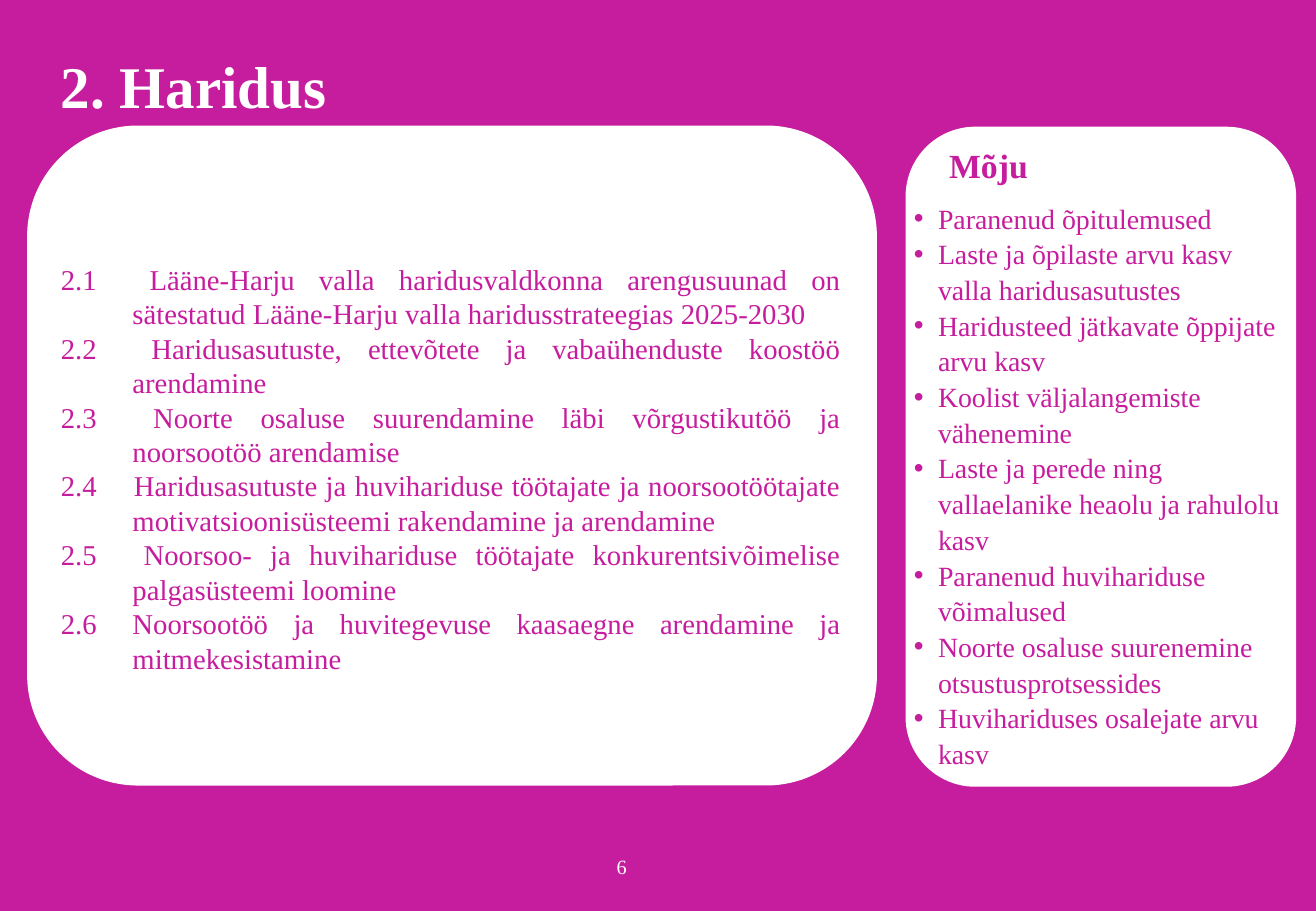
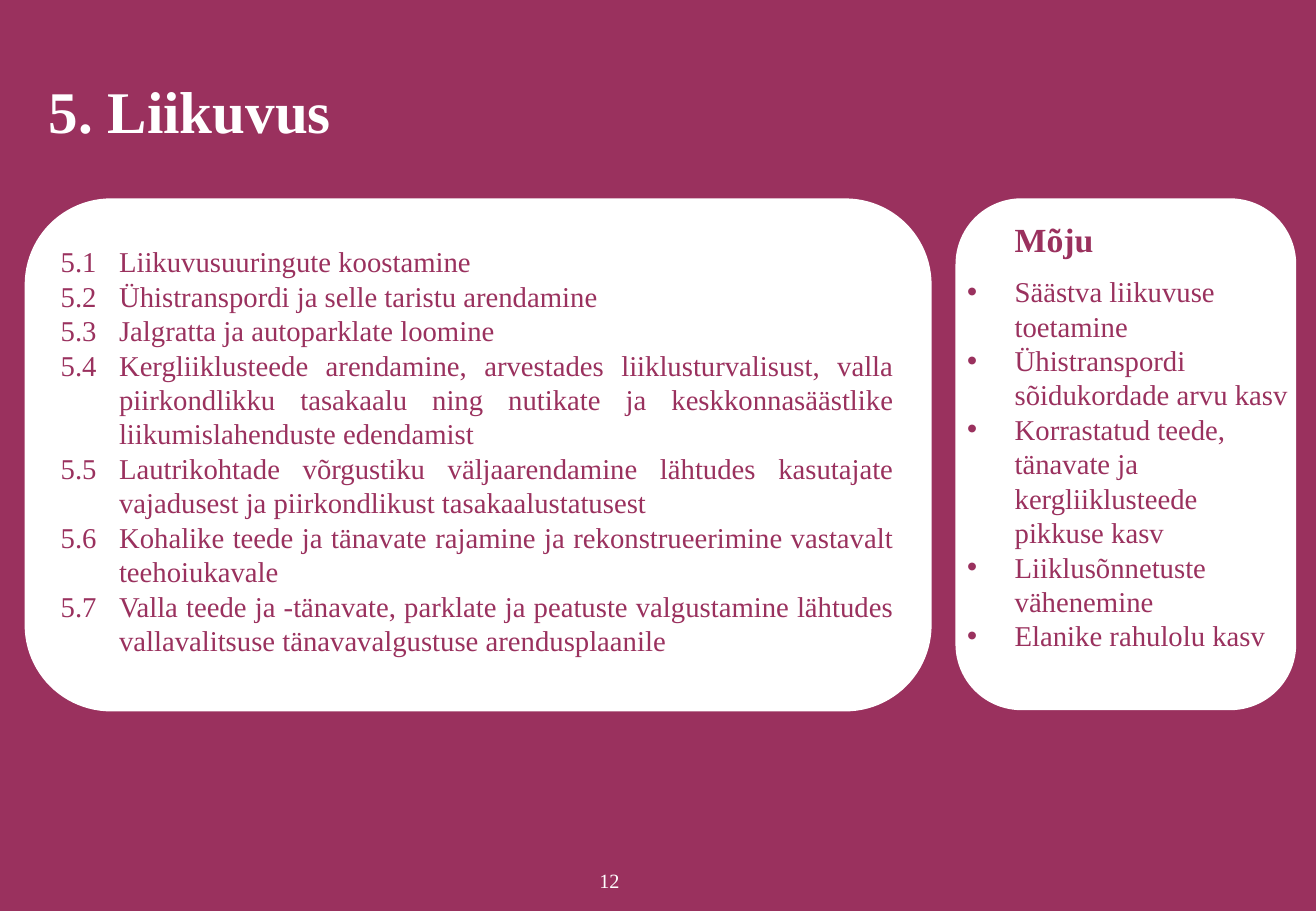
from lxml import etree
from pptx import Presentation
from pptx.dml.color import RGBColor
from pptx.enum.shapes import MSO_SHAPE
from pptx.enum.text import MSO_ANCHOR, MSO_AUTO_SIZE, PP_ALIGN
from pptx.oxml.ns import qn
from pptx.util import Inches, Pt

ROUNDED = MSO_SHAPE.ROUNDED_RECTANGLE
MIDDLE = MSO_ANCHOR.MIDDLE
NO_AUTOFIT = MSO_AUTO_SIZE.NONE
LEFT, CENTER, JUSTIFY = PP_ALIGN.LEFT, PP_ALIGN.CENTER, PP_ALIGN.JUSTIFY

FONT = "Times New Roman"
WHITE = "FFFFFF"
TITLE_SIZE, HEADING_SIZE, BODY_SIZE, NUMBER_SIZE = 35, 20, 17, 12
INSET = 0.05
TITLE_ONLY = 5


def color(value):
    return RGBColor.from_string(value)


class Deck:
    def __init__(self):
        self.presentation = Presentation()
        self.presentation.slide_width = Inches(10.83)
        self.presentation.slide_height = Inches(7.5)
        self.slide = None
        self.accent = None

    def start(self, accent):
        layout = self.presentation.slide_layouts[TITLE_ONLY]
        self.slide = self.presentation.slides.add_slide(layout)
        self.accent = accent
        fill = self.slide.background.fill
        fill.solid()
        fill.fore_color.rgb = color(accent)

    def frame(self, shape, wrap=True):
        frame = shape.text_frame
        frame.auto_size = NO_AUTOFIT
        frame.word_wrap = wrap
        frame.vertical_anchor = MIDDLE
        frame.margin_left = frame.margin_right = Inches(INSET)
        frame.margin_top = frame.margin_bottom = Inches(INSET)
        return frame

    def set_text(self, paragraph, text, size, text_color, bold=False, align=LEFT):
        paragraph.text = text
        paragraph.alignment = align
        for run in paragraph.runs:
            run.font.name = FONT
            run.font.size = Pt(size)
            run.font.bold = bold
            run.font.color.rgb = color(text_color)

    def indent(self, paragraph, left, first):
        properties = paragraph._p.get_or_add_pPr()
        properties.set("marL", str(Inches(left)))
        properties.set("indent", str(Inches(first)))
        return properties

    def bullet(self, paragraph, hang):
        properties = self.indent(paragraph, hang, -hang)
        etree.SubElement(properties, qn("a:buFont")).set("typeface", "Arial")
        etree.SubElement(properties, qn("a:buChar")).set("char", "•")

    def text_box(self, place, wrap=True):
        box = self.slide.shapes.add_textbox(*map(Inches, place))
        return self.frame(box, wrap)

    def title(self, text, place):
        shape = self.slide.shapes.title
        shape.left, shape.top, shape.width, shape.height = map(Inches, place)
        paragraph = self.frame(shape).paragraphs[0]
        self.set_text(paragraph, text, TITLE_SIZE, WHITE, bold=True)
        paragraph.line_spacing = 0.9

    def panel(self, place, corner):
        shape = self.slide.shapes.add_shape(ROUNDED, *map(Inches, place))
        shape.adjustments[0] = corner
        shape.shadow.inherit = False
        shape.fill.solid()
        shape.fill.fore_color.rgb = color(WHITE)
        shape.line.color.rgb = color(WHITE)
        shape.line.width = Pt(1)

    def actions(self, place, items, hang):
        frame = self.text_box(place)
        for index, item in enumerate(items):
            paragraph = frame.add_paragraph() if index else frame.paragraphs[0]
            self.set_text(paragraph, item, BODY_SIZE, self.accent, align=JUSTIFY)
            self.indent(paragraph, hang, -hang)

    def impact(self, place, items, heading_indent, hang, size, spacing, gap):
        frame = self.text_box(place)
        heading = frame.paragraphs[0]
        self.set_text(heading, "Mõju", HEADING_SIZE, self.accent, bold=True)
        heading.line_spacing = spacing
        heading.space_after = Pt(gap)
        self.indent(heading, heading_indent, 0)
        for item in items:
            paragraph = frame.add_paragraph()
            self.set_text(paragraph, item, size, self.accent)
            paragraph.line_spacing = spacing
            self.bullet(paragraph, hang)

    def page_number(self, text, place):
        paragraph = self.text_box(place, wrap=False).paragraphs[0]
        self.set_text(paragraph, text, NUMBER_SIZE, WHITE, align=CENTER)


def education(deck):
    deck.start("C61C9E")
    deck.title("2. Haridus", (0.45, 0.42, 9.96, 0.63))
    deck.panel((0.23, 1.04, 6.98, 5.42), 0.167)
    deck.actions((0.45, 2.09, 6.52, 3.53), [
        "2.1 \tLääne-Harju valla haridusvaldkonna arengusuunad on "
        "sätestatud Lääne-Harju valla haridusstrateegias 2025-2030",
        "2.2 \tHaridusasutuste, ettevõtete ja vabaühenduste koostöö arendamine",
        "2.3 \tNoorte osaluse suurendamine läbi võrgustikutöö ja "
        "noorsootöö arendamise",
        "2.4 \tHaridusasutuste ja huvihariduse töötajate ja noorsootöötajate "
        "motivatsioonisüsteemi rakendamine ja arendamine",
        "2.5 \tNoorsoo- ja huvihariduse töötajate konkurentsivõimelise "
        "palgasüsteemi loomine",
        "2.6\tNoorsootöö ja huvitegevuse kaasaegne arendamine ja "
        "mitmekesistamine",
    ], hang=0.59)
    deck.panel((7.46, 1.05, 3.2, 5.42), 0.177)
    deck.impact((7.47, 1.1, 3.13, 5.31), [
        "Paranenud õpitulemused",
        "Laste ja õpilaste arvu kasv valla haridusasutustes",
        "Haridusteed jätkavate õppijate arvu kasv",
        "Koolist väljalangemiste vähenemine",
        "Laste ja perede ning vallaelanike heaolu ja rahulolu kasv",
        "Paranenud huvihariduse võimalused",
        "Noorte osaluse suurenemine otsustusprotsessides",
        "Huvihariduses osalejate arvu kasv",
    ], heading_indent=0.29, hang=0.2, size=16.5, spacing=1.07, gap=8)
    deck.page_number("6", (5.02, 6.98, 0.19, 0.3))


def mobility(deck):
    deck.start("9A315E")
    deck.title("5. Liikuvus", (0.35, 0.64, 9.8, 0.6))
    deck.panel((0.21, 1.64, 7.45, 4.21), 0.167)
    deck.actions((0.45, 1.94, 6.96, 3.54), [
        "5.1\tLiikuvusuuringute koostamine",
        "5.2\tÜhistranspordi ja selle taristu arendamine",
        "5.3\tJalgratta ja autoparklate loomine",
        "5.4\tKergliiklusteede arendamine, arvestades liiklusturvalisust, "
        "valla piirkondlikku tasakaalu ning nutikate ja keskkonnasäästlike "
        "liikumislahenduste edendamist",
        "5.5\tLautrikohtade võrgustiku väljaarendamine lähtudes kasutajate "
        "vajadusest ja piirkondlikust tasakaalustatusest",
        "5.6\tKohalike teede ja tänavate rajamine ja rekonstrueerimine "
        "vastavalt teehoiukavale",
        "5.7\tValla teede ja -tänavate, parklate ja peatuste valgustamine "
        "lähtudes vallavalitsuse tänavavalgustuse arendusplaanile",
    ], hang=0.48)
    deck.panel((7.87, 1.64, 2.79, 4.2), 0.192)
    deck.impact((7.91, 2.19, 2.79, 2.79), [
        "Säästva liikuvuse toetamine",
        "Ühistranspordi sõidukordade arvu kasv",
        "Korrastatud teede, tänavate ja kergliiklusteede pikkuse kasv",
        "Liiklusõnnetuste vähenemine",
        "Elanike rahulolu kasv",
    ], heading_indent=0.39, hang=0.39, size=BODY_SIZE, spacing=1.0, gap=9)
    deck.page_number("12", (4.88, 7.1, 0.27, 0.3))


def main():
    deck = Deck()
    education(deck)
    mobility(deck)
    deck.presentation.save("out.pptx")


if __name__ == "__main__":
    main()
